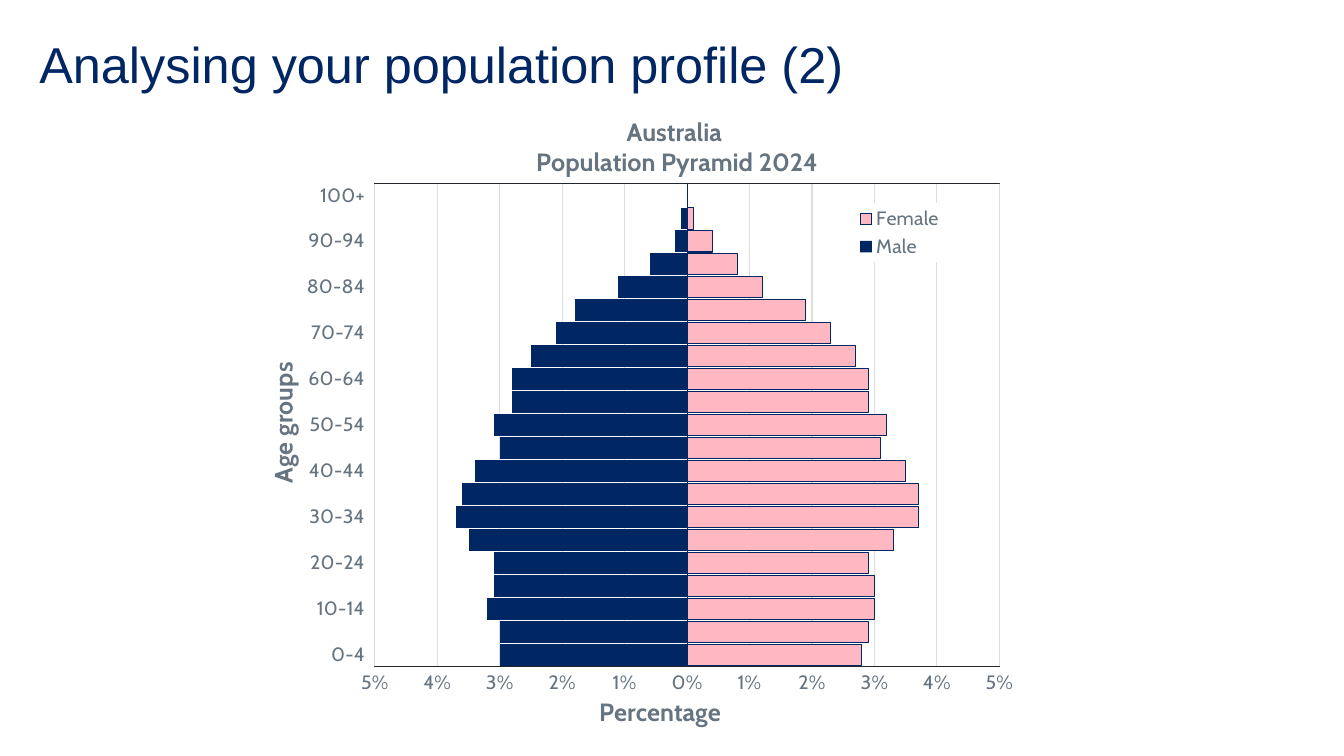
import pptx
import pptx.chart.data
import pptx.dml.color
import pptx.enum.chart
import pptx.enum.text
import pptx.oxml
import pptx.oxml.ns
import pptx.util

# Content
HEADING = "Analysing your population profile (2)"
CHART_TITLE = ["Australia ", "Population Pyramid 2024"]
AGE_TITLE = ["Age groups"]
SHARE_TITLE = ["Percentage"]
AGES = [f"{a}-{a + 4}" for a in range(0, 100, 5)] + ["100+"]
# Shares in tenths of a percent, youngest group first
MALE = [30, 30, 32, 31, 31, 35, 37, 36, 34, 30, 31, 28, 28, 25, 21, 18, 11, 6, 2, 1, 0]
FEMALE = [28, 29, 30, 30, 29, 33, 37, 37, 35, 31, 32, 29, 29, 27, 23, 19, 12, 8, 4, 1, 0]
COLORS = {"navy": "002664", "pink": "FFB8C1", "grey": "657480",
          "axis": "22272B", "grid": "DBDFE2", "white": "FFFFFF"}

# Places: inches on the slide, then shares of the chart
HEADING_BOX = (0.39, 0.4, 12.56, 0.6)
CHART_BOX = (2.38, 0.82, 8.26, 6.47)
PLOT = (0.162, 0.157, 0.75, 0.74)
PLOT = PLOT[:3] + (0.749,)
LEGEND = (0.742, 0.187, 0.1, 0.092)
TITLE_AT = (0.352, 0.046)
AGE_AT = (0.025, 0.429)
SHARE_AT = (0.426, 0.942)
LABEL = {"size": 14, "bold": False, "name": "Cabin", "color": "grey"}
TITLE = {**LABEL, "size": 18, "bold": True}


def rgb(name):
    return pptx.dml.color.RGBColor.from_string(COLORS[name])


def set_font(font, style):
    for key, value in style.items():
        if key == "color":
            font.color.rgb = rgb(value)
        else:
            setattr(font, key, pptx.util.Pt(value) if key == "size" else value)


def set_line(line, color):
    line.color.rgb = rgb(color)
    line.width = pptx.util.Pt(0.75)


def layout(place, inner=False):
    parts = ['<c:layoutTarget val="inner"/>'] if inner else []
    parts += [f'<c:{k}Mode val="edge"/>' for k in "xy"]
    parts += [f'<c:{k} val="{v}"/>' for k, v in zip("xywh", place)]
    return pptx.oxml.parse_xml(
        f'<c:layout {pptx.oxml.ns.nsdecls("c")}><c:manualLayout>'
        f'{"".join(parts)}</c:manualLayout></c:layout>')


def put_layout(parent, after, place, inner=False):
    for old in parent.findall(pptx.oxml.ns.qn("c:layout")):
        parent.remove(old)
    if after is None:
        parent.insert(0, layout(place, inner))
    else:
        parent.find(pptx.oxml.ns.qn(after)).addnext(layout(place, inner))


def set_title(title, lines, place):
    tf = title.text_frame
    for i, text in enumerate(lines):
        p = tf.add_paragraph() if i else tf.paragraphs[0]
        r = p.add_run()
        r.text = text
        set_font(r.font, TITLE)
    put_layout(title._element, "c:tx", place)


def shape_xml(fill, line):
    paint = [f'<a:solidFill><a:srgbClr val="{COLORS[c]}"/></a:solidFill>' if c
             else "<a:noFill/>" for c in (fill, line)]
    return pptx.oxml.parse_xml(
        f'<c:spPr {pptx.oxml.ns.nsdecls("c", "a")}>{paint[0]}'
        f'<a:ln w="9525">{paint[1]}</a:ln></c:spPr>')


prs = pptx.Presentation()
prs.slide_width, prs.slide_height = pptx.util.Inches(13.33), pptx.util.Inches(7.5)
slide = prs.slides.add_slide(prs.slide_layouts[6])

# Heading
tf = slide.shapes.add_textbox(*map(pptx.util.Inches, HEADING_BOX)).text_frame
for key, value in {"margin_left": 0, "margin_right": 0, "margin_top": 0,
                   "margin_bottom": 0, "word_wrap": True}.items():
    setattr(tf, key, value)
p = tf.paragraphs[0]
p.line_spacing = 0.9
r = p.add_run()
r.text = HEADING
set_font(r.font, {"size": 36, "name": "Arial", "color": "navy"})

# Pyramid: men count leftwards, women rightwards
data = pptx.chart.data.CategoryChartData()
data.categories = AGES
data.add_series("Male", [-v / 1000 for v in MALE])
data.add_series("Female", [v / 1000 for v in FEMALE])
chart = slide.shapes.add_chart(
    pptx.enum.chart.XL_CHART_TYPE.BAR_CLUSTERED,
    *map(pptx.util.Inches, CHART_BOX), data).chart
set_font(chart.font, {"size": 10, "name": "Arial", "color": "axis"})
set_title(chart.chart_title, CHART_TITLE, TITLE_AT)
plot = chart.plots[0]
plot.gap_width, plot.overlap, plot.vary_by_categories = 7, 100, False
for series, fill in zip(plot.series, ("navy", "pink")):
    series.invert_if_negative = False
    series.format.fill.solid()
    series.format.fill.fore_color.rgb = rgb(fill)
    if fill == "pink":
        set_line(series.format.line, "navy")
    else:
        series.format.line.fill.background()

# Axes
ages, shares = chart.category_axis, chart.value_axis
for axis, lines, place in ((ages, AGE_TITLE, AGE_AT), (shares, SHARE_TITLE, SHARE_AT)):
    set_title(axis.axis_title, lines, place)
    set_font(axis.tick_labels.font, LABEL)
    set_line(axis.format.line, "axis")
    axis.major_tick_mark = axis.minor_tick_mark = pptx.enum.chart.XL_TICK_MARK.NONE
ages.tick_label_position = pptx.enum.chart.XL_TICK_LABEL_POSITION.LOW
ages._element.find(pptx.oxml.ns.qn("c:noMultiLvlLbl")).addprevious(
    pptx.oxml.parse_xml(f'<c:tickLblSkip {pptx.oxml.ns.nsdecls("c")} val="2"/>'))
shares.minimum_scale, shares.maximum_scale, shares.major_unit = -0.05, 0.05, 0.01
shares.tick_labels.number_format = "#,##0%;#,##0%"
shares.tick_labels.number_format_is_linked = False
shares.has_major_gridlines = True
set_line(shares.major_gridlines.format.line, "grid")

# Plot frame and legend
area = chart._chartSpace.chart.plotArea
put_layout(area, None, PLOT, inner=True)
area.append(shape_xml(None, "axis"))
chart.has_legend = True
legend = chart.legend
legend.position = pptx.enum.chart.XL_LEGEND_POSITION.RIGHT
legend.include_in_layout = True
set_font(legend.font, LABEL)
put_layout(legend._element, "c:legendPos", LEGEND)
legend._element.find(pptx.oxml.ns.qn("c:overlay")).addnext(shape_xml("white", None))

prs.save("out.pptx")
